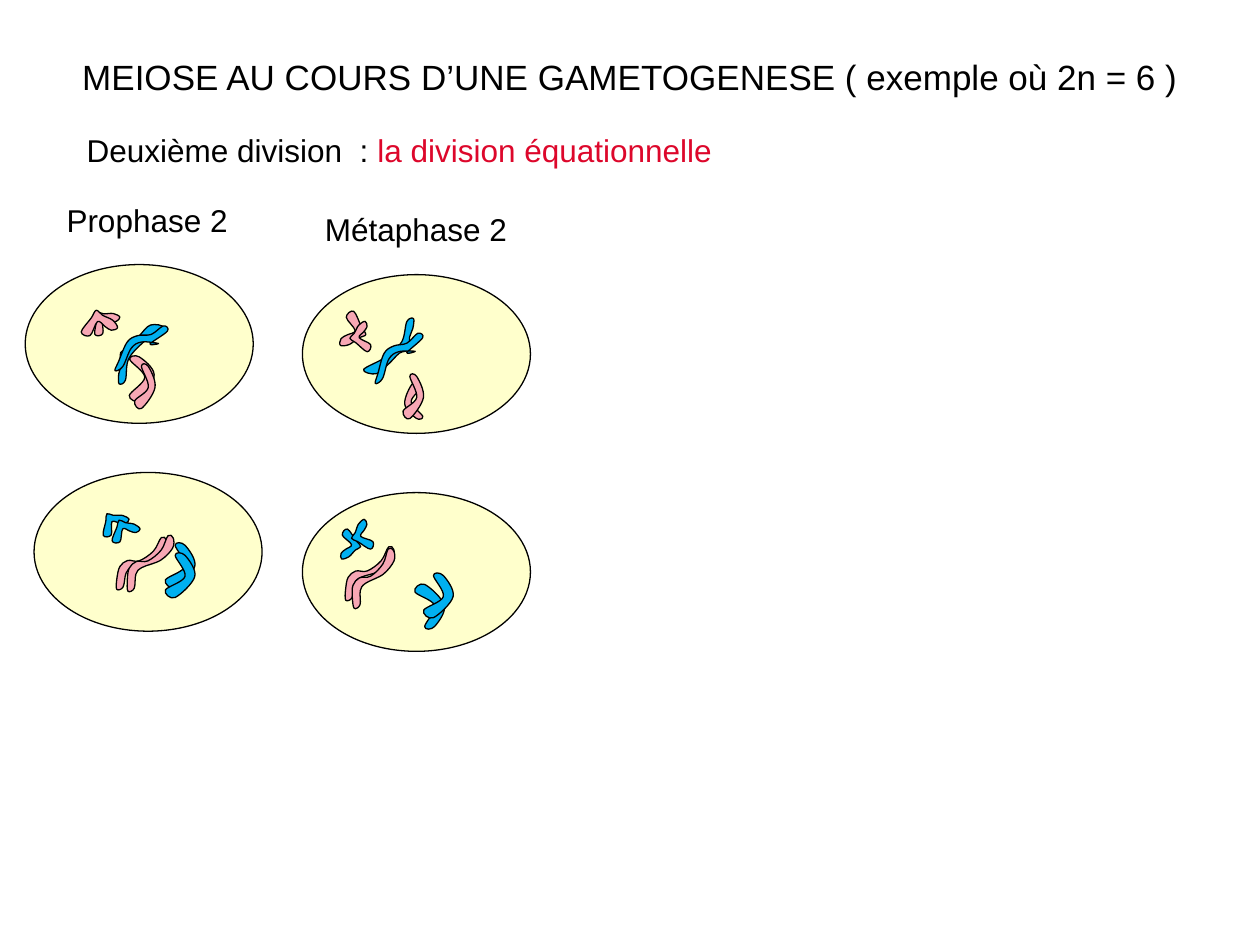
from dataclasses import dataclass
from math import cos, radians, sin

from lxml.etree import SubElement
from pptx import Presentation
from pptx.dml.color import RGBColor
from pptx.enum.shapes import MSO_SHAPE
from pptx.enum.text import MSO_ANCHOR, PP_ALIGN
from pptx.oxml.ns import qn
from pptx.util import Inches, Pt


@dataclass(frozen=True)
class Theme:
    font: str = "Arial"
    title_size: int = 20
    label_size: int = 18
    line_width: float = 0.75
    ink: str = "000000"
    accent: str = "DD072B"
    cell: str = "FFFFCC"
    pink: str = "F7A7B4"
    blue: str = "00B0F0"


@dataclass(frozen=True)
class Outline:
    tilt: float
    anchors: tuple


THEME = Theme()
CELL_SIZE = (1.81, 1.26)
UNITS = 1000

HOOK = Outline(123.5, (
    (25, 8), (17, 4), (12, 0), (8, 6), (0, 17), (7, 20),
    (13, 9), (19, 13), (24, 16), (29, 14)))
ARC = Outline(0, ((17, 3), (25, 20), (9, 37), (1, 31), (17, 20), (9, 3)))
WAVE = Outline(319.1, (
    (1, 35), (3, 26), (9, 21), (18, 21), (29, 13), (35, 2), (39, 4),
    (38, 12), (28, 21), (13, 26), (8, 31), (6, 42), (1, 44)))
STRAND = Outline(303.9, (
    (1, 40), (3, 33), (3, 23), (10, 19), (18, 9), (27, 0),
    (37, 2), (21, 14), (9, 28), (6, 45), (1, 48)))
TWIG = Outline(316.5, (
    (19, 15), (11, 21), (6, 37), (0, 41), (2, 33), (7, 16),
    (15, 10), (26, 8), (35, 0), (39, 4), (26, 16), (33, 15)))

KINDS = {
    "hook": (HOOK, 0.2, 0.2),
    "large hook": (HOOK, 0.24, 0.24),
    "arc": (ARC, 0.26, 0.38),
    "slim arc": (ARC, 0.18, 0.38),
    "short arc": (ARC, 0.18, 0.31),
    "wave": (WAVE, 0.56, 0.16),
    "strand": (STRAND, 0.59, 0.18),
    "twig": (TWIG, 0.55, 0.18),
}

PROPHASE = [
    ((0.2, 2.1), [
        ("hook", "pink", 0.55, 0.38, 95),
        ("large hook", "pink", 0.47, 0.39, 123),
        ("arc", "pink", 0.78, 0.71, 345),
        ("strand", "blue", 0.58, 0.59, 304),
        ("twig", "blue", 0.63, 0.55, 323),
        ("slim arc", "pink", 0.86, 0.78, 0)]),
    ((0.27, 3.75), [
        ("wave", "pink", 0.56, 0.63, 321),
        ("wave", "pink", 0.63, 0.63, 316),
        ("arc", "blue", 1.03, 0.55, 0),
        ("arc", "blue", 1.03, 0.63, 0),
        ("hook", "blue", 0.55, 0.33, 98),
        ("hook", "blue", 0.63, 0.39, 107)]),
]
METAPHASE = [
    ((2.4, 2.18), [
        ("large hook", "pink", 0.24, 0.31, 241),
        ("short arc", "pink", 0.8, 0.85, 163),
        ("strand", "blue", 0.43, 0.51, 130),
        ("twig", "blue", 0.47, 0.55, 316),
        ("hook", "pink", 0.4, 0.39, 36),
        ("slim arc", "pink", 0.79, 0.78, 0)]),
    ((2.4, 3.91), [
        ("wave", "pink", 0.24, 0.55, 319),
        ("wave", "pink", 0.27, 0.59, 310),
        ("arc", "blue", 0.88, 0.71, 180, True),
        ("arc", "blue", 0.95, 0.63, 0),
        ("hook", "blue", 0.24, 0.31, 231),
        ("hook", "blue", 0.41, 0.23, 28)]),
]


def place(shape, box):
    shape.left, shape.top, shape.width, shape.height = map(Inches, box)


def paint(shape, color):
    shape.shadow.inherit = False
    shape.fill.solid()
    shape.fill.fore_color.rgb = RGBColor.from_string(color)
    shape.line.color.rgb = RGBColor.from_string(THEME.ink)
    shape.line.width = Pt(THEME.line_width)


def upright(outline):
    c, s = cos(radians(outline.tilt)), sin(radians(outline.tilt))
    turned = [(x * c + y * s, y * c - x * s) for x, y in outline.anchors]
    axes = []
    for values in zip(*turned):
        low, span = min(values), max(values) - min(values)
        axes.append([(value - low) / span * UNITS for value in values])
    return list(zip(*axes))


def smooth_curve(anchors):
    count = len(anchors)
    points = [anchors[0]]
    for index in range(count):
        before, here, there, after = (
            anchors[(index + step) % count] for step in (-1, 0, 1, 2))
        points.append([h + (t - b) / 6 for b, h, t in zip(before, here, there)])
        points.append([t - (a - h) / 6 for h, t, a in zip(here, there, after)])
        points.append(there)
    return [(round(x), round(y)) for x, y in points]


def curve_segments(shape):
    segments = shape.element.findall(".//" + qn("a:lnTo"))
    for first in range(0, len(segments), 3):
        trio = segments[first:first + 3]
        curve = SubElement(trio[0].getparent(), qn("a:cubicBezTo"))
        trio[0].addprevious(curve)
        for segment in trio:
            curve.append(segment[0])
            segment.getparent().remove(segment)


def add_chromosome(page, origin, kind, color, left, top, angle, flipped=False):
    outline, width, height = KINDS[kind]
    start, *rest = smooth_curve(upright(outline))
    builder = page.shapes.build_freeform(*start, scale=UNITS)
    builder.add_line_segments(rest, close=True)
    shape = builder.convert_to_shape()
    curve_segments(shape)
    place(shape, (origin[0] + left, origin[1] + top, width, height))
    shape.rotation = angle
    if flipped:
        shape.element.spPr.find(qn("a:xfrm")).set("flipH", "1")
    paint(shape, getattr(THEME, color))


def add_cell(page, origin, chromosomes):
    cell = page.shapes.add_shape(MSO_SHAPE.OVAL, 0, 0, 0, 0)
    place(cell, (*origin, *CELL_SIZE))
    paint(cell, THEME.cell)
    for chromosome in chromosomes:
        add_chromosome(page, origin, *chromosome)


def write(para, size, *spans):
    para.font.name = THEME.font
    para.font.size = Pt(size)
    for text, color in spans:
        span = para.add_run()
        span.text = text
        span.font.color.rgb = RGBColor.from_string(color)


def add_title(page, box, text):
    title = page.shapes.title
    place(title, box)
    title.text_frame.vertical_anchor = MSO_ANCHOR.MIDDLE
    para = title.text_frame.paragraphs[0]
    para.alignment = PP_ALIGN.CENTER
    write(para, THEME.title_size, (text, THEME.ink))


def add_label(page, box, *spans):
    label = page.shapes.add_textbox(*map(Inches, box))
    label.text_frame.word_wrap = True
    write(label.text_frame.paragraphs[0], THEME.label_size, *spans)


def add_phase(page, label_box, name, cells):
    add_label(page, label_box, (name, THEME.ink))
    for origin, chromosomes in cells:
        add_cell(page, origin, chromosomes)


def main():
    deck = Presentation()
    deck.slide_width, deck.slide_height = Inches(10), Inches(7.5)
    page = deck.slides.add_slide(deck.slide_layouts[5])
    add_title(page, (0.5, 0.3, 9, 0.61),
              "MEIOSE AU COURS D’UNE GAMETOGENESE ( exemple où 2n = 6 )")
    add_label(page, (0.59, 0.99, 5.43, 0.4),
              ("Deuxième division  : ", THEME.ink),
              ("la division équationnelle", THEME.accent))
    add_phase(page, (0.43, 1.55, 1.5, 0.4), "Prophase 2", PROPHASE)
    add_phase(page, (2.48, 1.62, 1.89, 0.4), "Métaphase 2", METAPHASE)
    deck.save("out.pptx")


if __name__ == "__main__":
    main()
